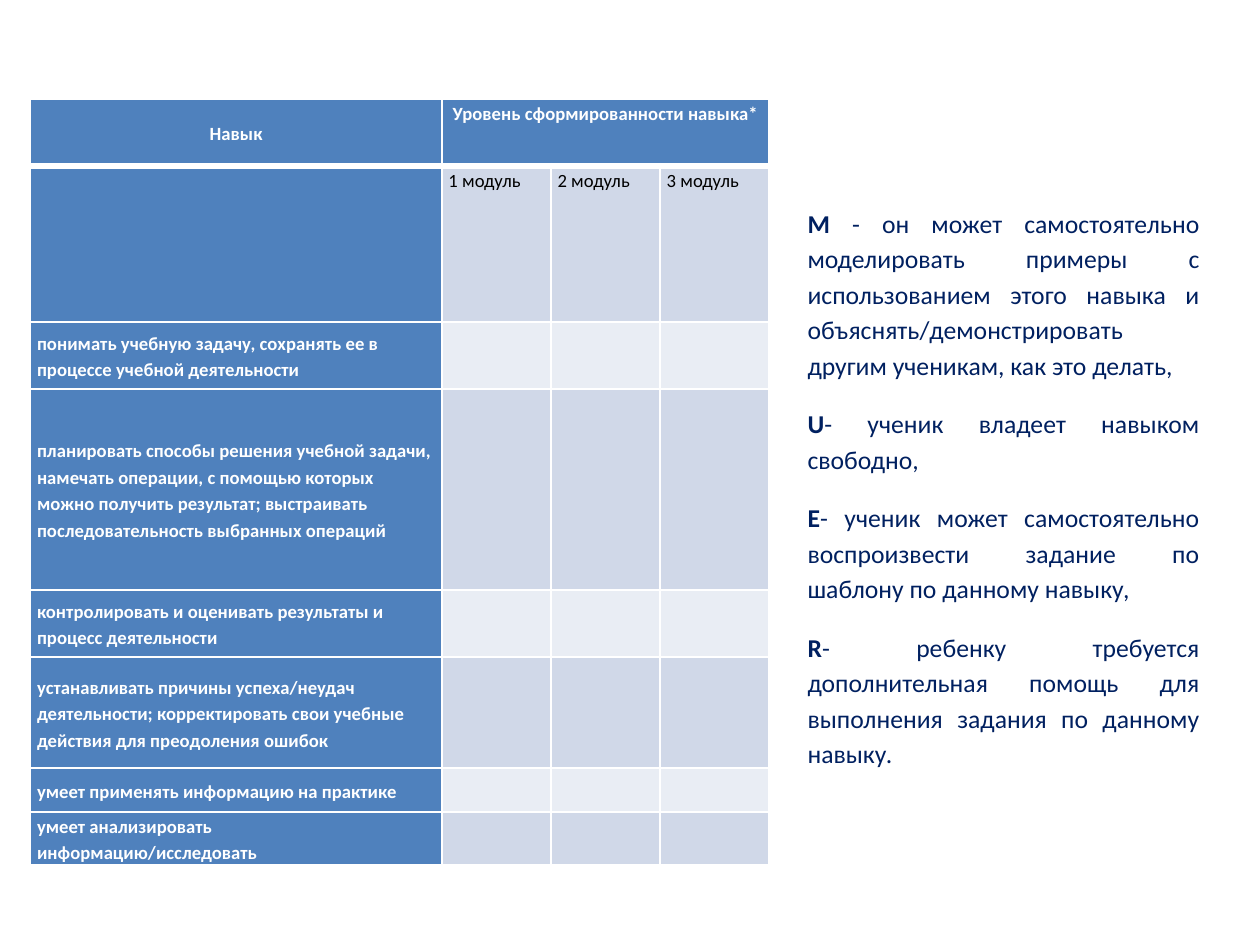
from dataclasses import dataclass

from lxml.etree import SubElement
from pptx import Presentation
from pptx.dml.color import RGBColor
from pptx.enum.text import MSO_ANCHOR as Anchor, MSO_AUTO_SIZE as AutoSize, PP_ALIGN as Align
from pptx.oxml.ns import qn
from pptx.util import Cm, Pt

WHITE = RGBColor(0xFF, 0xFF, 0xFF)
BLACK = RGBColor(0, 0, 0)
NAVY = RGBColor(0x00, 0x20, 0x60)
BLUE = RGBColor(0x4F, 0x81, 0xBD)
BANDS = (RGBColor(0xD0, 0xD8, 0xE8), RGBColor(0xE9, 0xED, 0xF4))

FONT = "Calibri"
PARAGRAPH_FORMAT = {"line_spacing": 1.15, "space_after": Pt(10)}
CELL_MARGINS = {"margin_left": Cm(0.1), "margin_right": Cm(0.1),
                "margin_top": 0, "margin_bottom": 0}
SKILL_WIDTH, MODULE_WIDTH = 6.22, 1.65


@dataclass
class Skill:
    text: str
    height: float


@dataclass
class Level:
    letter: str
    meaning: str


MODULES = ("1 модуль", "2 модуль", "3 модуль")
SKILLS = (
    Skill("понимать учебную задачу, сохранять ее в процессе учебной деятельности", 1.01),
    Skill("планировать способы решения учебной задачи, намечать операции, с помощью "
          "которых можно получить результат; выстраивать последовательность "
          "выбранных операций", 3.04),
    Skill("контролировать и оценивать результаты и процесс деятельности", 1.01),
    Skill("устанавливать причины успеха/неудач деятельности; корректировать свои "
          "учебные действия для преодоления ошибок", 1.69),
    Skill("умеет применять информацию на практике", 0.66),
    Skill("умеет анализировать информацию/исследовать", 0.66),
)
LEVELS = (
    Level("М", " - он может самостоятельно моделировать примеры с использованием этого "
               "навыка и объяснять/демонстрировать другим ученикам, как это делать, "),
    Level("U", "- ученик владеет навыком свободно, "),
    Level("E", "- ученик может самостоятельно воспроизвести задание по шаблону "
               "по данному навыку, "),
    Level("R", "- ребенку требуется дополнительная помощь для выполнения задания "
               "по данному навыку. "),
)


def apply_format(target, values: dict) -> None:
    for name, value in values.items():
        setattr(target, name, value)


def add_run(paragraph, text: str, size: int, color: RGBColor, bold: bool) -> None:
    run = paragraph.add_run()
    run.text = text
    apply_format(run.font, {"name": FONT, "size": Pt(size), "bold": bold})
    run.font.color.rgb = color


def add_borders(cell, bottom_width: int) -> None:
    properties = cell._tc.get_or_add_tcPr()
    for side, width in {"lnL": 1, "lnR": 1, "lnT": 1, "lnB": bottom_width}.items():
        line = SubElement(properties, qn(f"a:{side}"), w=str(Pt(width)))
        fill = SubElement(line, qn("a:solidFill"))
        SubElement(fill, qn("a:srgbClr"), val=str(WHITE))


def fill_cell(cell, text: str, fill: RGBColor, color: RGBColor = WHITE, bold: bool = True,
              align: Align = Align.LEFT, anchor: Anchor = Anchor.MIDDLE,
              bottom_width: int = 1) -> None:
    add_borders(cell, bottom_width)
    cell.fill.solid()
    cell.fill.fore_color.rgb = fill
    apply_format(cell, {**CELL_MARGINS, "vertical_anchor": anchor})
    paragraph = cell.text_frame.paragraphs[0]
    if text:
        apply_format(paragraph, {**PARAGRAPH_FORMAT, "alignment": align})
        add_run(paragraph, text, 8, color, bold)
    else:
        # An empty cell keeps a small text size so that its row stays low
        SubElement(paragraph._p, qn("a:endParaRPr"), sz="800")


def add_skill_table(slide) -> None:
    heights = [1.01, 2.36] + [skill.height for skill in SKILLS]
    widths = [SKILL_WIDTH] + [MODULE_WIDTH] * len(MODULES)
    table = slide.shapes.add_table(len(heights), len(widths), Cm(0.46), Cm(1.5),
                                   Cm(sum(widths)), Cm(sum(heights))).table
    for column, width in zip(table.columns, widths):
        column.width = Cm(width)
    for row, height in zip(table.rows, heights):
        row.height = Cm(height)

    # Header
    table.cell(0, 1).merge(table.cell(0, len(MODULES)))
    headings = ("Навык", "Уровень сформированности навыка*", "", "")
    for index, heading in enumerate(headings):
        fill_cell(table.cell(0, index), heading, BLUE, align=Align.CENTER,
                  anchor=Anchor.TOP if index else Anchor.MIDDLE, bottom_width=3)

    # Module names, then one row per skill
    body = [("", MODULES)] + [(skill.text, ("",) * len(MODULES)) for skill in SKILLS]
    for index, (skill_text, marks) in enumerate(body):
        fill_cell(table.cell(index + 1, 0), skill_text, BLUE)
        for column, mark in enumerate(marks, start=1):
            fill_cell(table.cell(index + 1, column), mark, BANDS[index % 2],
                      color=BLACK, bold=False, anchor=Anchor.TOP)


def add_level_key(slide) -> None:
    frame = slide.shapes.add_textbox(Cm(11.96), Cm(2.95), Cm(6.43), Cm(8.86)).text_frame
    apply_format(frame, {"word_wrap": True, "auto_size": AutoSize.SHAPE_TO_FIT_TEXT})
    for index, level in enumerate(LEVELS):
        paragraph = frame.add_paragraph() if index else frame.paragraphs[0]
        apply_format(paragraph, {**PARAGRAPH_FORMAT, "alignment": Align.JUSTIFY})
        add_run(paragraph, level.letter, 11, NAVY, True)
        add_run(paragraph, level.meaning, 11, NAVY, False)


def main() -> None:
    deck = Presentation()
    apply_format(deck, {"slide_width": Cm(19.05), "slide_height": Cm(14.29)})
    slide = deck.slides.add_slide(deck.slide_layouts[6])
    add_skill_table(slide)
    add_level_key(slide)
    deck.save("out.pptx")


if __name__ == "__main__":
    main()
